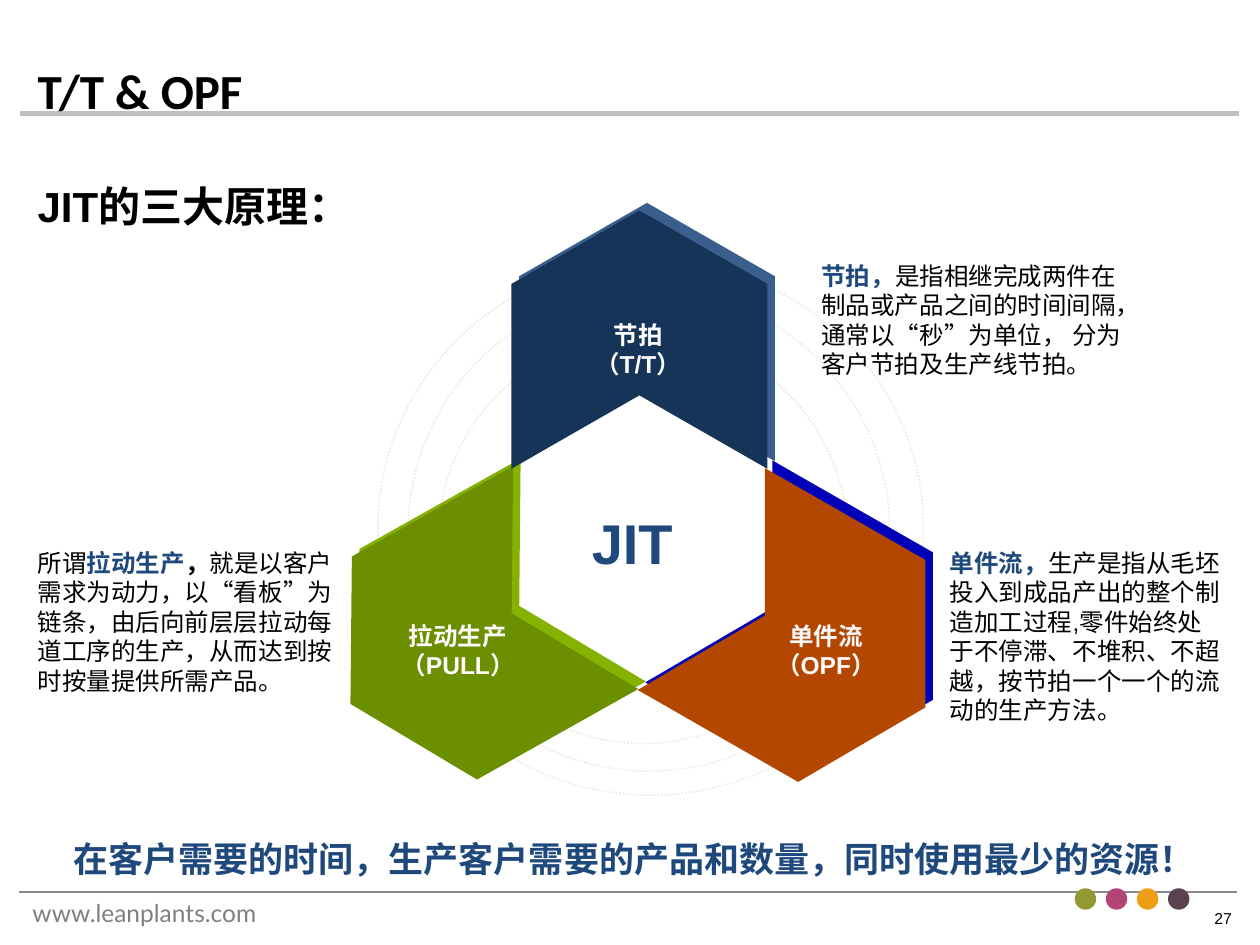
from lxml import etree
from pptx import Presentation
from pptx.dml.color import RGBColor
from pptx.enum.dml import MSO_LINE
from pptx.enum.shapes import MSO_CONNECTOR, MSO_SHAPE
from pptx.enum.text import MSO_ANCHOR, MSO_AUTO_SIZE, PP_ALIGN
from pptx.oxml.ns import qn
from pptx.util import Inches, Pt

COLORS = {
    "black": "000000", "blue": "1F497D", "label": "FFFBFC", "space": "1C1C1C",
    "address": "7F7F7F", "title rule": "BFBFBF", "footer rule": "8B8B8B",
    "ring": "EEECE1",
    "takt": "163457", "takt side": "3A5F8C",
    "pull": "6B8F00", "pull side": "85B200",
    "flow": "B44700", "flow side": "0000B8",
}
DOT_COLORS = ("939932", "B24476", "EC9F14", "5C414F")
RINGS = ((3, 2.07, 4.33, 4.24), (3.24, 2.3, 3.82, 3.82), (3.48, 2.65, 3.25, 3.25))
CHEVRONS = (("pull", 2.65, 4.07, 150.7), ("takt", 4.05, 1.68, 270),
            ("flow", 5.43, 4.09, 29.8))
DEPTH = 0.06
LABELS = (
    ((3.95, 2.49, 2.23, 0.57), "节拍", "（T/T）"),
    ((3, 4.88, 1.27, 0.57), "拉动生产", "（PULL）"),
    ((5.92, 4.88, 1.27, 0.57), "单件流", "（OPF）"),
)
NOTES = (
    ((7.44, 4.3, 2.36, 1.5), (
        ("单件流，", "blue", True),
        ("生产是指从毛坯投入到成品产出的整个制造加工过程,零件始终处于不停滞、"
         "不堆积、不超越，按节拍一个一个的流动的生产方法。", "black", False))),
    ((6.42, 2.02, 2.68, 1.03), (
        ("节拍，", "blue", True),
        ("是指相继完成两件在制品或产品之间的时间间隔，通常以“秒”为单位， "
         "分为客户节拍及生产线节拍。", "black", False))),
    ((0.2, 4.3, 2.68, 1.26), (
        ("所谓", "black", False),
        ("拉动生产", "blue", True),
        ("，", "black", True),
        ("就是以客户需求为动力，以“看板”为链条，由后向前层层拉动每道工序的生产，"
         "从而达到按时按量提供所需产品。", "black", False))),
)


def rgb(value):
    return RGBColor.from_string(value)


def add_rule(page, x1, x2, y, color, width):
    rule = page.shapes.add_connector(
        MSO_CONNECTOR.STRAIGHT, Inches(x1), Inches(y), Inches(x2), Inches(y))
    rule.line.color.rgb = rgb(COLORS[color])
    rule.line.width = Pt(width)
    etree.SubElement(rule.element.spPr, qn("a:effectLst"))


def add_shape(page, kind, area, fill=None):
    shape = page.shapes.add_shape(kind, *map(Inches, area))
    shape.shadow.inherit = False
    if fill:
        shape.fill.solid()
        shape.fill.fore_color.rgb = rgb(fill)
        shape.line.fill.background()
    else:
        shape.fill.background()
    return shape


def add_ring(page, area):
    ring = add_shape(page, MSO_SHAPE.OVAL, area)
    ring.line.color.rgb = rgb(COLORS["ring"])
    ring.line.width = Pt(1)
    ring.line.dash_style = MSO_LINE.ROUND_DOT


def add_chevron(page, name, left, top, rotation):
    """Add a chevron with its side showing at the upper right."""
    for color, shift in ((f"{name} side", DEPTH), (name, 0)):
        area = (left + shift, top - shift, 2.05, 2.03)
        chevron = add_shape(page, MSO_SHAPE.CHEVRON, area, COLORS[color])
        chevron.adjustments[0] = 0.287
        chevron.rotation = rotation


def add_text(page, area, paragraphs, align=PP_ALIGN.LEFT, spacing=None,
             font="Arial", grow=True, wrap=True):
    """Add paragraphs, each a list of (text, size, color, bold) runs."""
    box = page.shapes.add_textbox(*map(Inches, area))
    frame = box.text_frame
    frame.word_wrap = wrap
    frame.auto_size = MSO_AUTO_SIZE.SHAPE_TO_FIT_TEXT if grow else MSO_AUTO_SIZE.NONE
    for index, runs in enumerate(paragraphs):
        para = frame.add_paragraph() if index else frame.paragraphs[0]
        para.alignment = align
        if spacing:
            para.line_spacing = spacing
        for text, size, color, bold in runs:
            span = para.add_run()
            span.text = text
            span.font.name = font
            span.font.size = Pt(size)
            span.font.bold = bold
            span.font.color.rgb = rgb(COLORS[color])
    return box


def add_frame(page):
    """Add the rules, footer, title and dots around the content."""
    add_rule(page, 0.15, 9.82, 7.08, "footer rule", 1)
    add_rule(page, 0.16, 9.83, 0.9, "title rule", 3)
    add_text(page, (0.16, 7.08, 2.34, 0.34),
             [[("www.leanplants.com", 14, "address", False)]], font="Lato")
    add_text(page, (9.54, 7.16, 0.37, 0.27), [[("27", 9, "black", False)]], wrap=False)
    title = add_text(page, (0.2, 0.44, 8.43, 0.55),
                     [[("T/T & OPF", 28, "black", True)]], font="Calibri", grow=False)
    title.text_frame.vertical_anchor = MSO_ANCHOR.MIDDLE
    for index, color in enumerate(DOT_COLORS):
        add_shape(page, MSO_SHAPE.OVAL, (8.53 + index * 0.74 / 3, 7.05, 0.17, 0.17), color)


def main():
    deck = Presentation()
    deck.slide_width, deck.slide_height = Inches(10), Inches(7.5)
    page = deck.slides.add_slide(deck.slide_layouts[6])
    add_frame(page)
    add_text(page, (0.2, 1.38, 9.06, 0.5), [[("JIT的三大原理：", 24, "black", True)]])
    add_text(page, (0.43, 6.66, 9.21, 0.37),
             [[("在客户需要的时间，生产客户需要的产品和数量，同时使用最少的资源！",
                20, "blue", True)]], PP_ALIGN.CENTER, 0.8)
    for area in RINGS:
        add_ring(page, area)
    for chevron in CHEVRONS:
        add_chevron(page, *chevron)
    add_text(page, (4.05, 3.99, 2.03, 0.63),
             [[("JIT", 32, "blue", True), (" ", 24, "space", False)]], PP_ALIGN.CENTER)
    for area, *lines in LABELS:
        add_text(page, area, [[(line, 14, "label", True)] for line in lines],
                 PP_ALIGN.CENTER)
    for area, runs in NOTES:
        add_text(page, area, [[(text, 14, color, bold) for text, color, bold in runs]])
    deck.save("out.pptx")


if __name__ == "__main__":
    main()
